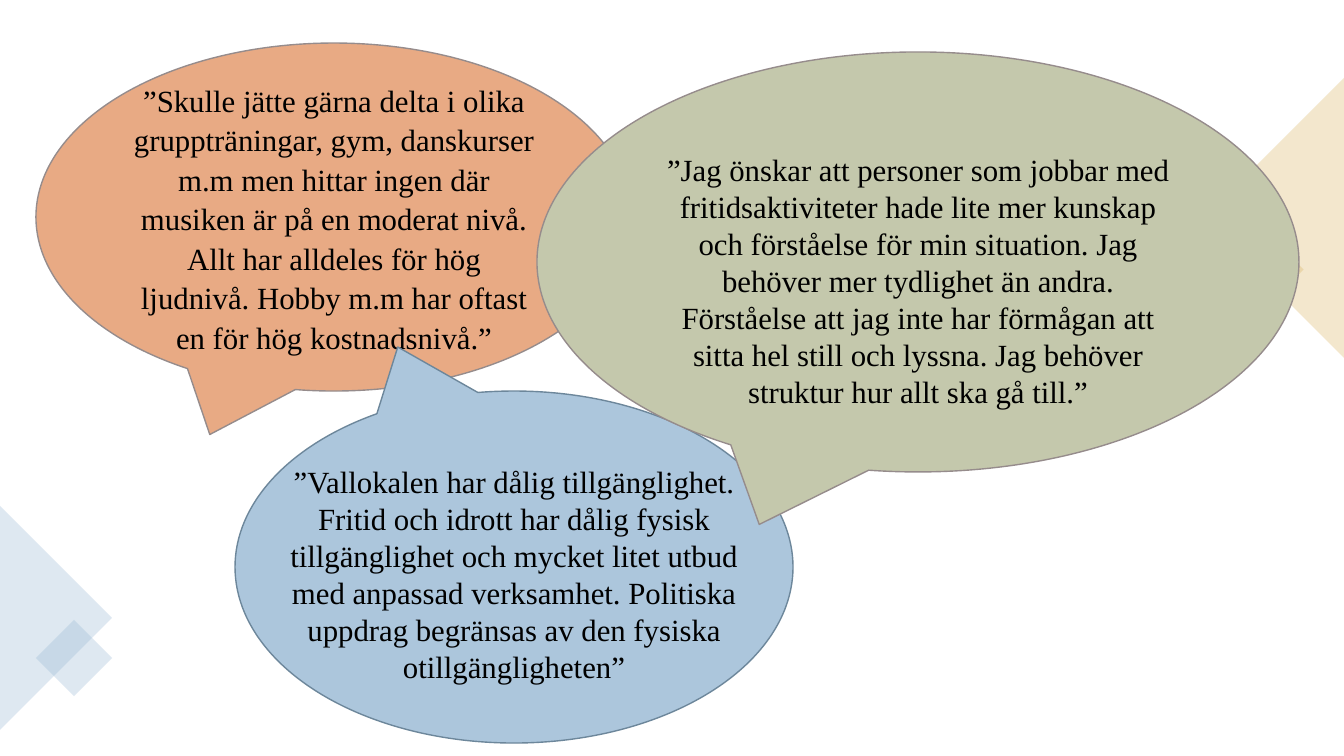
from lxml import etree
from pptx import Presentation
from pptx.dml.color import RGBColor
from pptx.enum.shapes import MSO_SHAPE
from pptx.enum.text import MSO_ANCHOR, PP_ALIGN
from pptx.oxml.ns import qn
from pptx.util import Pt

RECTANGLE = MSO_SHAPE.RECTANGLE
CALLOUT = MSO_SHAPE.OVAL_CALLOUT
MIDDLE = MSO_ANCHOR.MIDDLE
CENTER = PP_ALIGN.CENTER
PX = 914400 / 100.8


def fill_shape(shape, color):
    shape.shadow.inherit = False
    shape.fill.solid()
    shape.fill.fore_color.rgb = RGBColor.from_string(color)


def write_quote(text_frame, text):
    text_frame.word_wrap = True
    paragraph = text_frame.paragraphs[0]
    paragraph.text = text
    paragraph.alignment = CENTER
    paragraph.font.name = "Times New Roman"
    paragraph.font.size = Pt(22)
    paragraph.font.color.rgb = RGBColor.from_string("000000")
    return paragraph


presentation = Presentation()
presentation.slide_width = round(1344 * PX)
presentation.slide_height = round(756 * PX)
slide = presentation.slides.add_slide(presentation.slide_layouts[6])

# Translucent diamonds and half diamonds at the slide edges
decorations = []
for edge, tip, middle, half_height, square_box, color in [
    (1344, 1204, 218, 140, (1218, 234, 71, 71), "D8B25C"),
    (0, 112, 618, 112, (47, 631, 54, 54), "94B6D2"),
]:
    builder = slide.shapes.build_freeform(edge, middle - half_height, scale=PX)
    builder.add_line_segments([(tip, middle), (edge, middle + half_height)])
    decorations.append((builder.convert_to_shape(), color))
    square = slide.shapes.add_shape(RECTANGLE, *[round(v * PX) for v in square_box])
    square.rotation = 45
    decorations.append((square, color))
for decoration, color in decorations:
    fill_shape(decoration, color)
    decoration.line.fill.background()
    color_element = decoration.fill._xPr.find(".//" + qn("a:srgbClr"))
    etree.SubElement(color_element, qn("a:alpha"), val="30000")

# Speech bubbles, from back to front
bubbles = [
    ("training", (36, 43, 596, 348), "E8AA84", "968C8C"),
    ("access", (235, 391, 558, 352), "ACC6DC", "6D879B"),
    ("knowledge", (537, 52, 762, 420), "C4C8AC", "968C8C"),
]
quotes = {
    "training": "”Skulle jätte gärna delta i olika gruppträningar, gym, danskurser "
                "m.m men hittar ingen där musiken är på en moderat nivå. Allt har "
                "alldeles för hög ljudnivå. Hobby m.m har oftast en för hög "
                "kostnadsnivå.”",
    "access": "”Vallokalen har dålig tillgänglighet. Fritid och idrott har dålig "
              "fysisk tillgänglighet och mycket litet utbud med anpassad verksamhet. "
              "Politiska uppdrag begränsas av den fysiska otillgängligheten”",
    "knowledge": "”Jag önskar att personer som jobbar med fritidsaktiviteter hade "
                 "lite mer kunskap och förståelse för min situation. Jag behöver mer "
                 "tydlighet än andra. Förståelse att jag inte har förmågan att sitta "
                 "hel still och lyssna. Jag behöver struktur hur allt ska gå till.”",
}
top_margins = {"training": 0, "knowledge": 37}
for topic, box, color, line_color in bubbles:
    bubble = slide.shapes.add_shape(CALLOUT, *[round(v * PX) for v in box])
    fill_shape(bubble, color)
    bubble.line.color.rgb = RGBColor.from_string(line_color)
    bubble.line.width = Pt(1)
    if topic == "access":
        # Turned upside down, so its quote sits in a separate text box
        bubble.rotation = 180
        bubble._element.spPr.find(qn("a:xfrm")).set("flipH", "1")
        text_box = slide.shapes.add_textbox(
            *[round(v * PX) for v in (279, 458, 470, 234)])
        write_quote(text_box.text_frame, quotes[topic])
        continue
    text_frame = bubble.text_frame
    text_frame.vertical_anchor = MIDDLE
    text_frame.margin_top = round(top_margins[topic] * PX)
    text_frame.margin_bottom = 0
    paragraph = write_quote(text_frame, quotes[topic])
    if topic == "training":
        paragraph.line_spacing = 1.07

presentation.save("out.pptx")
